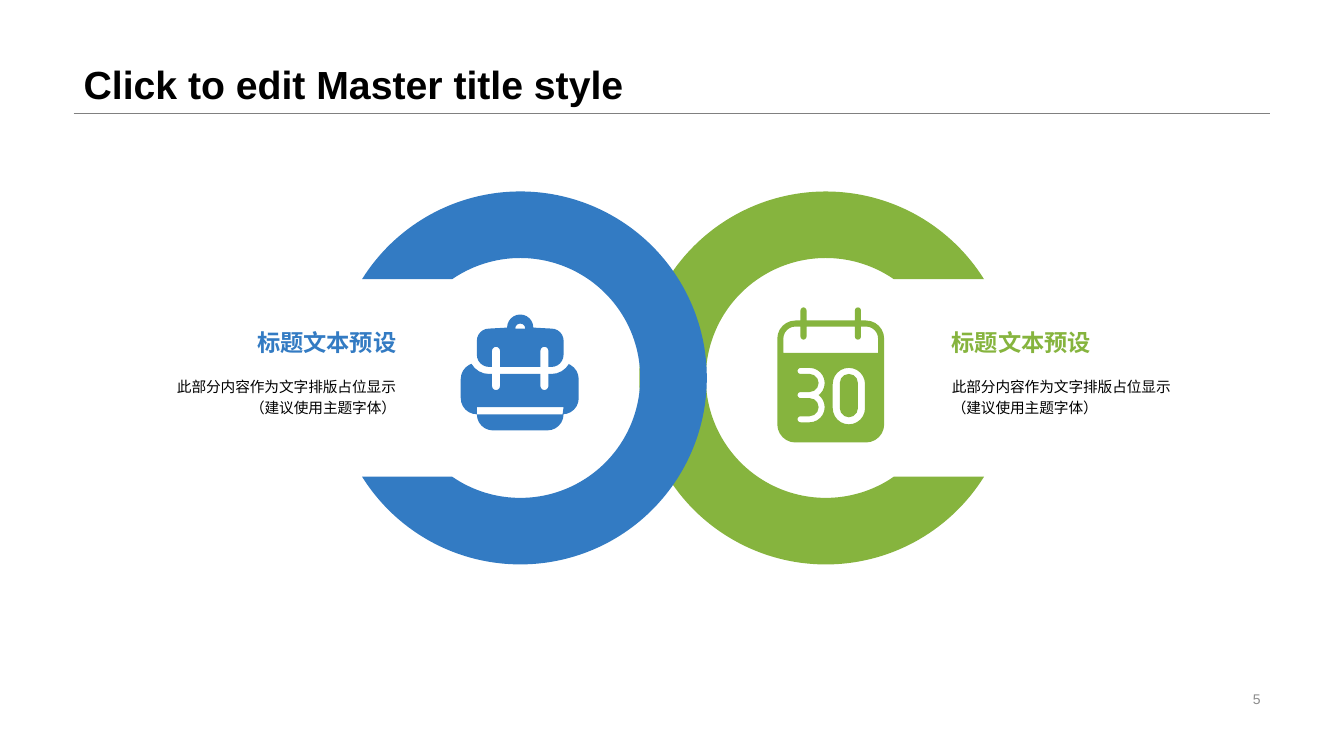
from copy import deepcopy
from dataclasses import dataclass
from math import asin, cos, degrees, radians, sin

from lxml import etree
from pptx import Presentation
from pptx.dml.color import RGBColor
from pptx.enum.shapes import MSO_CONNECTOR
from pptx.enum.text import MSO_ANCHOR, PP_ALIGN
from pptx.oxml.ns import qn
from pptx.util import Inches, Pt

LEFT, RIGHT = PP_ALIGN.LEFT, PP_ALIGN.RIGHT
TOP, MIDDLE, BOTTOM = MSO_ANCHOR.TOP, MSO_ANCHOR.MIDDLE, MSO_ANCHOR.BOTTOM
STRAIGHT = MSO_CONNECTOR.STRAIGHT
TITLE_ONLY = 5


@dataclass(frozen=True)
class Theme:
    font: str = "Arial"
    black: str = "000000"
    blue: str = "337BC3"
    green: str = "86B43E"
    rule: str = "808080"
    number: str = "8C8C8C"
    title_size: float = 28
    heading_size: float = 16.6
    body_size: float = 10.5
    number_size: float = 10


THEME = Theme()
HEADING = "标题文本预设"
BODY = "此部分内容作为文字排版占位显示\n（建议使用主题字体）"


# Text
def write(tf, text, *, size, color, bold=False, align=LEFT, anchor=TOP,
          spacing=1.0, side=0.1, edge=0.05):
    tf.word_wrap = True
    tf.vertical_anchor = anchor
    tf.margin_left = tf.margin_right = Inches(side)
    tf.margin_top = tf.margin_bottom = Inches(edge)
    p = tf.paragraphs[0]
    p.text = text
    p.alignment = align
    p.line_spacing = spacing
    for r in p.runs:
        r.font.name = THEME.font
        r.font.size = Pt(size)
        r.font.bold = bold
        r.font.color.rgb = RGBColor.from_string(color)
    # A line break takes the format of the text around it
    for br in p._p.findall(qn("a:br")):
        br.insert(0, deepcopy(p.runs[0]._r.rPr))


def add_text(slide, box, text, **fmt):
    sp = slide.shapes.add_textbox(*map(Inches, box))
    write(sp.text_frame, text, **fmt)


# Outlines: points are (x, y, curve), where curve is (radius, start, sweep)
# of the arc that leads there; angles run clockwise from the right
def point(x, y):
    return [(x, y, None)]


def arc(cx, cy, r, start, end):
    low, high = sorted((start, end))
    knots = [a for a in range(-360, 721, 90) if low < a < high]
    knots = [start, *(knots if start < end else knots[::-1]), end]
    curves = [None] + [(r, a, b - a) for a, b in zip(knots, knots[1:])]
    return [(cx + r * cos(radians(a)), cy + r * sin(radians(a)), curve)
            for a, curve in zip(knots, curves)]


def stadium(left, top, right, bottom):
    r = (right - left) / 2
    return (arc(left + r, top + r, r, 180, 360)
            + arc(left + r, bottom - r, r, 0, 180))


def add_outline(slide, x, y, contours, color):
    paths = [[(Inches(x + px), Inches(y + py)) for px, py, _ in c]
             for c in contours]
    builder = slide.shapes.build_freeform(*paths[0][0], scale=1.0)
    for i, points in enumerate(paths):
        if i:
            builder.move_to(*points[0])
        builder.add_line_segments(points[1:], close=True)
    sp = builder.convert_to_shape()
    sp.shadow.inherit = False
    sp.fill.solid()
    sp.fill.fore_color.rgb = RGBColor.from_string(color)
    sp.line.fill.background()
    # Bend the segments that belong to arcs
    curves = [curve for c in contours for _, _, curve in c[1:]]
    for segment, curve in zip(list(sp._element.iter(qn("a:lnTo"))), curves):
        if curve:
            r, start, sweep = curve
            bend = etree.Element(qn("a:arcTo"), wR=str(Inches(r)), hR=str(Inches(r)),
                                 stAng=str(round(start % 360 * 60000)),
                                 swAng=str(round(sweep * 60000)))
            segment.getparent().replace(segment, bend)


# Ring with a slot on its outer side: turn 0 opens right, 180 opens left
def add_ring(slide, cx, cy, turn, color, outer=1.85, inner=1.19, slot=0.98):
    a, b = degrees(asin(slot / outer)), degrees(asin(slot / inner))
    ring = (arc(0, 0, outer, turn + a, turn + 360 - a)
            + arc(0, 0, inner, turn + 360 - b, turn + b))
    add_outline(slide, cx, cy, [ring], color)


def add_backpack(slide, x, y, color):
    straps = (0.35, 0.83)
    pocket = (point(0.16, 0.99) + point(1.02, 0.99)
              + arc(0.86, 0.99, 0.16, 0, 90) + arc(0.32, 0.99, 0.16, 90, 180))
    bag = arc(0.28, 0.39, 0.2, 150, 90)
    for sx in straps:
        bag += (point(sx - 0.04, 0.59) + arc(sx, 0.71, 0.04, 180, 0)
                + point(sx + 0.04, 0.59))
    bag += (arc(0.9, 0.39, 0.2, 90, 30)
            + arc(1.01, 0.64, 0.16, -66, 0) + arc(1.01, 0.83, 0.16, 0, 90)
            + point(1.02, 0.92) + point(0.16, 0.92)
            + arc(0.16, 0.83, 0.16, 90, 180) + arc(0.16, 0.64, 0.16, 180, 246))
    flap = (arc(0.28, 0.26, 0.12, 180, 270) + arc(0.59, 0.13, 0.13, 180, 360)
            + arc(0.9, 0.26, 0.12, 270, 360) + arc(0.9, 0.4, 0.12, 0, 90))
    for sx in reversed(straps):
        flap += (point(sx + 0.04, 0.52) + arc(sx, 0.36, 0.04, 0, -180)
                 + point(sx - 0.04, 0.52))
    flap += arc(0.28, 0.4, 0.12, 90, 180)
    handle = arc(0.59, 0.14, 0.05, 180, 360)
    add_outline(slide, x, y, [pocket, bag, handle, flap], color)


def add_calendar(slide, x, y, color):
    def top_edge(r, edge, tip, end):
        points = arc(0.18, 0.31, r, 180, 270)
        for px in (0.26, 0.8):
            points += (point(px - 0.03, edge) + arc(px, tip, 0.03, 180, end)
                       + point(px + 0.03, edge))
        return points + arc(0.88, 0.31, r, 270, 360)

    page = (top_edge(0.18, 0.13, 0.03, 360)
            + arc(0.88, 1.16, 0.18, 0, 90) + arc(0.18, 1.16, 0.18, 90, 180))
    header = top_edge(0.12, 0.19, 0.29, 0) + point(1, 0.45) + point(0.06, 0.45)
    three = (arc(0.32, 0.75, 0.15, -90, 53) + arc(0.32, 0.99, 0.15, -53, 90)
             + arc(0.23, 1.11, 0.03, 90, 270) + arc(0.32, 0.99, 0.09, 90, -90)
             + arc(0.23, 0.87, 0.03, 90, 270) + arc(0.32, 0.75, 0.09, 90, -90)
             + arc(0.23, 0.63, 0.03, 90, 270))
    zero = [stadium(0.55, 0.6, 0.87, 1.16), stadium(0.62, 0.66, 0.8, 1.09)]
    add_outline(slide, x, y, [page, header, three, *zero], color)


# Heading over a two-line description
def add_caption(slide, x, y, w, align, color):
    add_text(slide, (x, y + 0.34, w, 0.64), BODY, size=THEME.body_size,
             color=THEME.black, align=align, anchor=MIDDLE, spacing=1.2,
             side=0.08, edge=0)
    add_text(slide, (x, y, w, 0.27), HEADING, size=THEME.heading_size,
             color=color, bold=True, align=align, side=0.08, edge=0)


# Title, rule and page number
def add_frame(slide, x, w, rule_y):
    line = slide.shapes.add_connector(STRAIGHT, Inches(x), Inches(rule_y),
                                      Inches(x + w), Inches(rule_y))
    line.line.color.rgb = RGBColor.from_string(THEME.rule)
    line.line.width = Pt(0.25)
    etree.SubElement(line._element.spPr, qn("a:effectLst"))
    title = slide.shapes.title
    title.left, title.top = Inches(x), Inches(0)
    title.width, title.height = Inches(w), Inches(rule_y)
    write(title.text_frame, "Click to edit Master title style",
          size=THEME.title_size, color=THEME.black, bold=True,
          anchor=BOTTOM, spacing=0.9)
    add_text(slide, (x + w - 3.18, 6.82, 3.18, 0.23), "5",
             size=THEME.number_size, color=THEME.number, align=RIGHT,
             anchor=MIDDLE)


def main():
    prs = Presentation()
    prs.slide_width, prs.slide_height = Inches(13.33), Inches(7.5)
    slide = prs.slides.add_slide(prs.slide_layouts[TITLE_ONLY])
    add_frame(slide, 0.73, 11.87, 1.12)
    add_ring(slide, 8.19, 3.75, 0, THEME.green)
    add_ring(slide, 5.16, 3.75, 180, THEME.blue)
    add_backpack(slide, 4.57, 3.12, THEME.blue)
    add_calendar(slide, 7.71, 3.05, THEME.green)
    add_caption(slide, 9.36, 3.26, 2.69, LEFT, THEME.green)
    add_caption(slide, 1.38, 3.26, 2.63, RIGHT, THEME.blue)
    prs.save("out.pptx")


if __name__ == "__main__":
    main()
